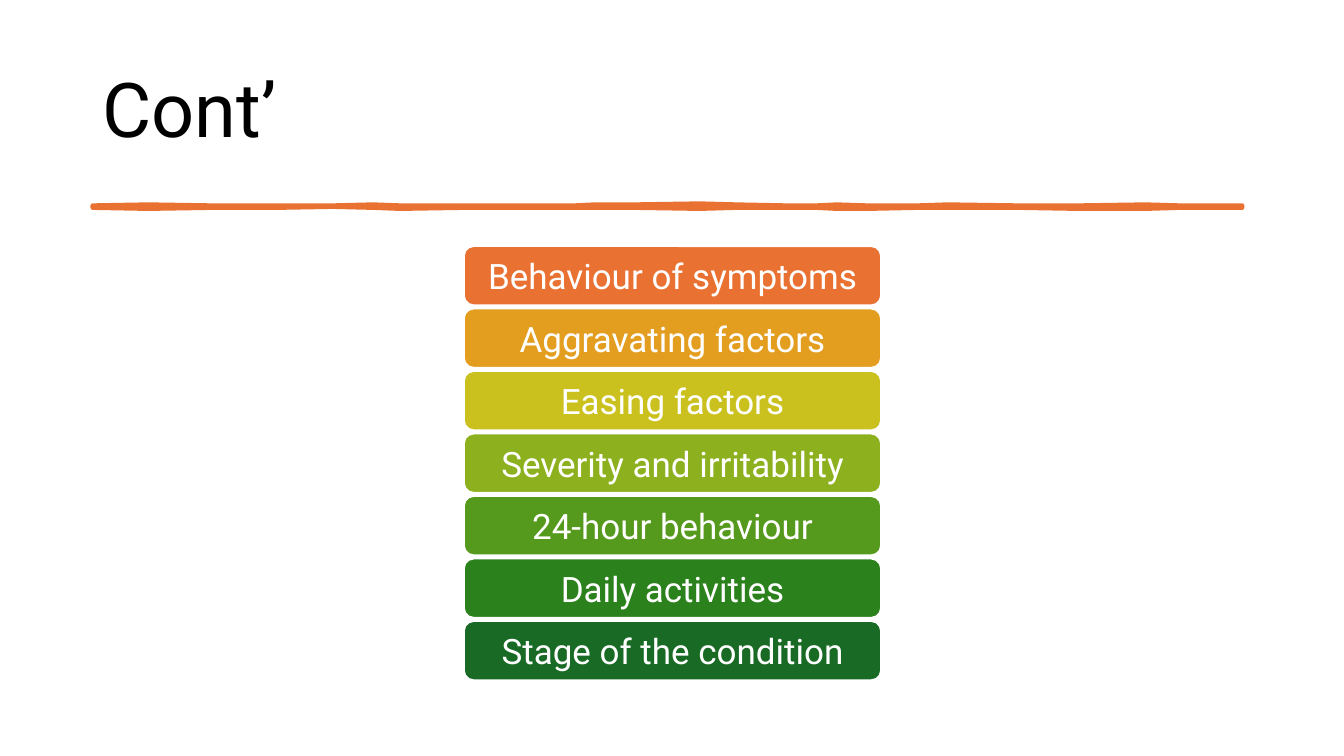
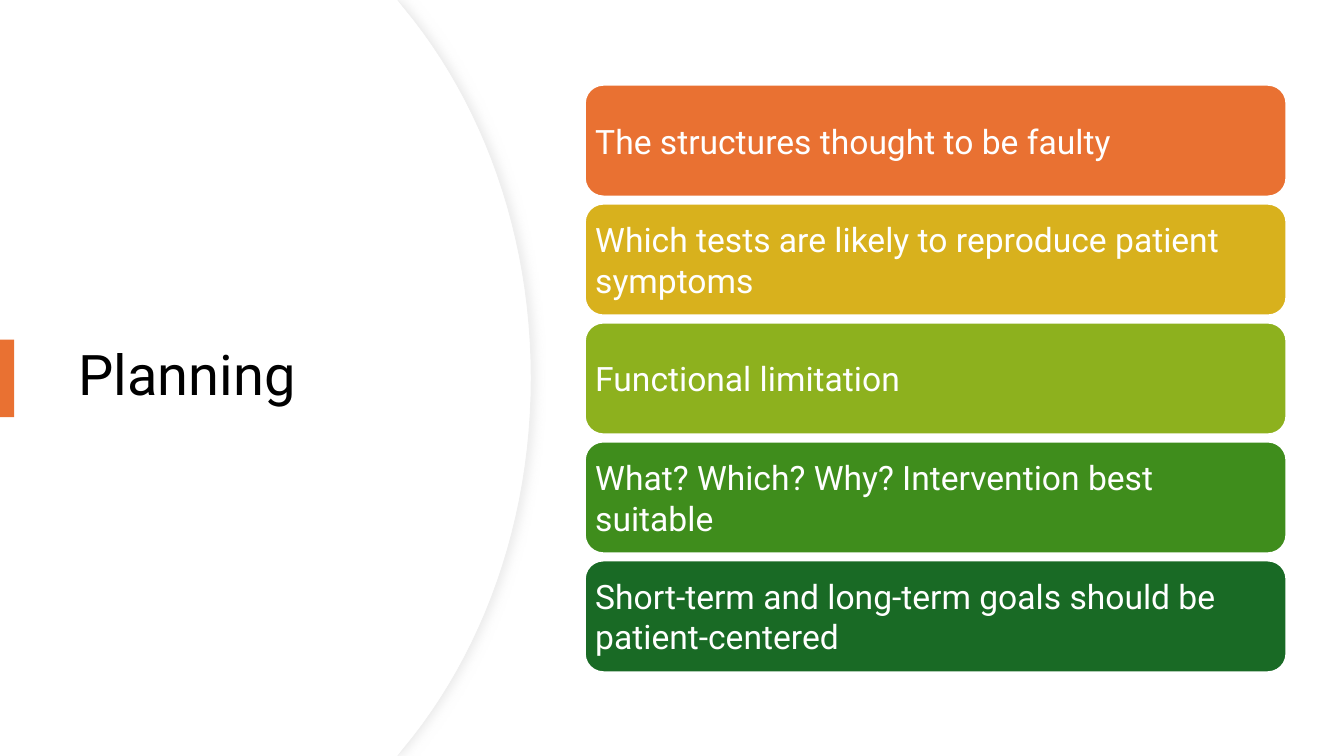
from lxml import etree
from pptx import Presentation
from pptx.dml.color import RGBColor
from pptx.enum.shapes import MSO_SHAPE
from pptx.enum.text import MSO_ANCHOR, PP_ALIGN
from pptx.oxml.ns import qn
from pptx.util import Inches, Pt

BLACK = RGBColor(0x00, 0x00, 0x00)
WHITE = RGBColor(0xFF, 0xFF, 0xFF)
PALE = RGBColor(0xEF, 0xEF, 0xEF)
SHADE = RGBColor(0xD9, 0xD9, 0xD9)
ORANGE = RGBColor(0xE9, 0x71, 0x32)
AMBER = RGBColor(0xE3, 0x9D, 0x1F)
GOLD = RGBColor(0xD8, 0xB1, 0x1D)
YELLOW = RGBColor(0xCB, 0xC1, 0x1E)
LIME = RGBColor(0x8D, 0xB1, 0x1E)
LEAF = RGBColor(0x55, 0x99, 0x1D)
GRASS = RGBColor(0x3F, 0x8D, 0x1C)
GREEN = RGBColor(0x2B, 0x81, 0x1B)
FOREST = RGBColor(0x19, 0x6A, 0x25)

SYMPTOM_BARS = [
    ("Behaviour of symptoms", ORANGE),
    ("Aggravating factors", AMBER),
    ("Easing factors", YELLOW),
    ("Severity and irritability", LIME),
    ("24-hour behaviour", LEAF),
    ("Daily activities", GREEN),
    ("Stage of the condition", FOREST),
]
PLANNING_BARS = [
    ("The structures thought to be faulty", ORANGE),
    ("Which tests are likely to reproduce patient symptoms", GOLD),
    ("Functional limitation", LIME),
    ("What? Which? Why? Intervention best suitable", GRASS),
    ("Short-term and long-term goals should be patient-centered", FOREST),
]
BRUSH_EDGES = [
    (0.92, 2.04, 2.06), (1.47, 2.03, 2.07), (2.10, 2.04, 2.06),
    (2.40, 2.04, 2.06), (2.75, 2.04, 2.06), (3.30, 2.04, 2.05),
    (3.70, 2.03, 2.06), (3.97, 2.04, 2.07), (4.60, 2.04, 2.06),
    (5.10, 2.04, 2.06), (5.70, 2.04, 2.06), (5.90, 2.03, 2.06),
    (6.30, 2.03, 2.06), (6.94, 2.02, 2.07), (7.30, 2.03, 2.06),
    (7.80, 2.04, 2.06), (8.10, 2.04, 2.06), (8.30, 2.03, 2.07),
    (8.60, 2.04, 2.07), (9.10, 2.04, 2.06), (9.40, 2.03, 2.06),
    (10.10, 2.04, 2.06), (10.70, 2.04, 2.07), (11.36, 2.03, 2.07),
    (11.70, 2.04, 2.06), (12.32, 2.04, 2.06),
]


def bezier(p0, p1, p2, p3, steps=24):
    for i in range(steps + 1):
        t = i / steps
        weights = ((1 - t) ** 3, 3 * t * (1 - t) ** 2, 3 * t * t * (1 - t), t ** 3)
        yield tuple(sum(w * p[axis] for w, p in zip(weights, (p0, p1, p2, p3)))
                    for axis in (0, 1))


class Deck:
    FONT = {"name": "Roboto", "bold": False}
    MARGINS = ("margin_left", "margin_right", "margin_top", "margin_bottom")

    def __init__(self):
        self.prs = Presentation()
        self.prs.slide_width = Inches(13.33)
        self.prs.slide_height = Inches(7.5)
        self.s = None

    def slide(self):
        self.s = self.prs.slides.add_slide(self.prs.slide_layouts[6])

    def paint(self, sp, fill, line=None, width=0):
        sp.shadow.inherit = False
        sp.fill.solid()
        sp.fill.fore_color.rgb = fill
        if line is None:
            sp.line.fill.background()
        else:
            sp.line.color.rgb = line
            sp.line.width = Pt(width)
        return sp

    def set_text(self, sp, text, size, color, align=PP_ALIGN.LEFT, spacing=1.0):
        tf = sp.text_frame
        tf.word_wrap = True
        tf.vertical_anchor = MSO_ANCHOR.MIDDLE
        p = tf.paragraphs[0]
        p.alignment = align
        p.line_spacing = spacing
        r = p.add_run()
        r.text = text
        for name, value in {**self.FONT, "size": Pt(size)}.items():
            setattr(r.font, name, value)
        r.font.color.rgb = color
        return tf

    def title(self, text, size, *box):
        sp = self.s.shapes.add_textbox(*map(Inches, box))
        self.set_text(sp, text, size, BLACK, spacing=0.9)

    def block(self, kind, fill, box, line=None, width=0):
        sp = self.s.shapes.add_shape(kind, *map(Inches, box))
        return self.paint(sp, fill, line, width)

    def outline(self, points, fill, line=None, width=0):
        start, *rest = [tuple(map(Inches, point)) for point in points]
        builder = self.s.shapes.build_freeform(*start)
        builder.add_line_segments(rest, close=True)
        return self.paint(builder.convert_to_shape(), fill, line, width)

    def bars(self, rows, left, top, width, height, pitch, size, align):
        for i, (text, color) in enumerate(rows):
            box = (left, top + i * pitch, width, height)
            sp = self.block(MSO_SHAPE.ROUNDED_RECTANGLE, color, box, WHITE, 1.5)
            tf = self.set_text(sp, text, size, WHITE, align)
            for name in self.MARGINS:
                setattr(tf, name, Inches(0.05))

    def brush_rule(self):
        upper = [(x, top) for x, top, bottom in BRUSH_EDGES]
        lower = [(x, bottom) for x, top, bottom in reversed(BRUSH_EDGES)]
        self.outline(upper + lower, ORANGE, ORANGE, 3.25)

    def curved_panel(self, right, line=None, width=0):
        half = list(bezier((right - 1.26, 0.08), (right - 0.48, 1.02),
                           (right, 2.32), (right, 3.75)))
        mirror = [(x, 7.5 - y) for x, y in reversed(half[:-1])]
        points = [(0, 0), (3.94, 0), *half, *mirror, (3.94, 7.5), (0, 7.5)]
        return self.outline(points, WHITE, line, width)

    def cast_shadow(self, sp, color, alpha, blur, distance):
        effects = sp.element.spPr.find(qn("a:effectLst"))
        shadow = etree.SubElement(effects, qn("a:outerShdw"), blurRad=str(Pt(blur)),
                                  dist=str(Pt(distance)), dir="0", algn="l",
                                  rotWithShape="0")
        tint = etree.SubElement(shadow, qn("a:srgbClr"), val=str(color))
        etree.SubElement(tint, qn("a:alpha"), val=str(alpha * 1000))


def main():
    deck = Deck()

    deck.slide()
    deck.title("Cont’", 54, 0.92, 0.4, 11.5, 1.45)
    deck.brush_rule()
    deck.bars(SYMPTOM_BARS, 4.6, 2.44, 4.14, 0.59, 0.62, 25, PP_ALIGN.CENTER)

    deck.slide()
    panel = deck.curved_panel(5.27, PALE, 0.75)
    deck.cast_shadow(panel, SHADE, 50, 7, 3)
    deck.curved_panel(5.26)
    deck.title("Planning", 40, 0.68, 1.27, 3.94, 4.95)
    deck.block(MSO_SHAPE.RECTANGLE, ORANGE, (0, 3.37, 0.14, 0.77))
    deck.bars(PLANNING_BARS, 5.8, 0.84, 6.96, 1.11, 1.18, 24, PP_ALIGN.LEFT)

    deck.prs.save("out.pptx")


if __name__ == "__main__":
    main()
